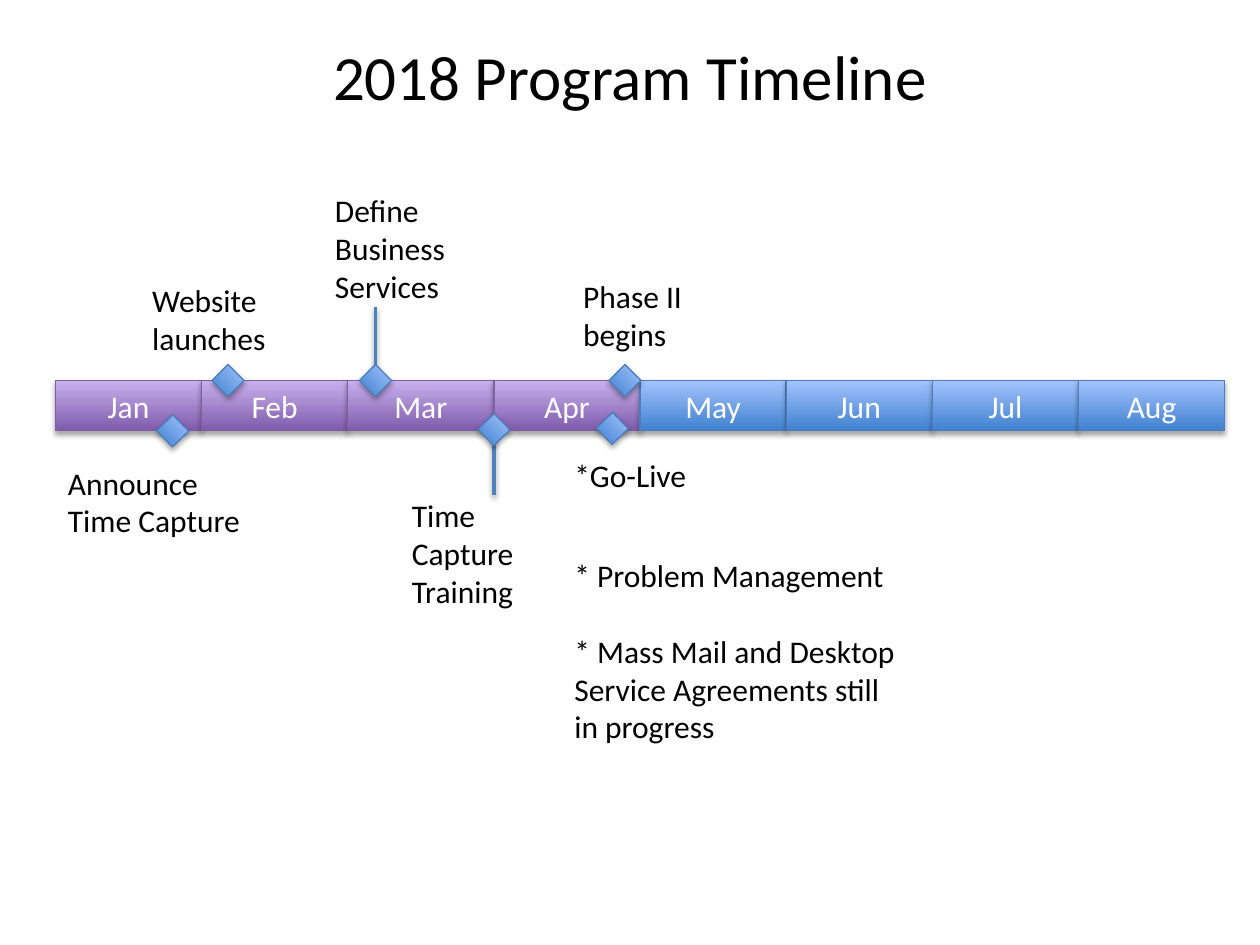
from lxml import etree
from pptx import Presentation
from pptx.dml.color import RGBColor
from pptx.enum.shapes import MSO_CONNECTOR, MSO_SHAPE
from pptx.enum.text import MSO_ANCHOR, PP_ALIGN
from pptx.oxml.ns import qn
from pptx.util import Inches, Pt

RECT = MSO_SHAPE.RECTANGLE
STRAIGHT = MSO_CONNECTOR.STRAIGHT
TOP, MIDDLE = MSO_ANCHOR.TOP, MSO_ANCHOR.MIDDLE
CENTER = PP_ALIGN.CENTER

COLORS = {
    "black": "000000",
    "white": "FFFFFF",
    "purple_dark": "7F5BAB",
    "purple_light": "C8B0ED",
    "purple_line": "7D60A0",
    "blue_dark": "3F80CE",
    "blue_light": "A4C4FF",
    "blue_line": "4B7EBC",
    "stem": "4F81BD",
}
FONT = "Calibri"
MONTHS = ["Jan", "Feb", "Mar", "Apr", "May", "Jun", "Jul", "Aug"]
PAST_MONTHS = 4
MARKER = 0.18

STEMS = [(2.98, 2.44, 3.02), (3.92, 3.35, 3.93)]
MARKERS = [
    (2.98, 3.02, 45),
    (4.86, 3.4, 45.9),
    (1.37, 3.42, 45.9),
    (1.81, 3.02, 45),
    (4.96, 3.02, 45),
    (3.92, 3.41, 45.9),
]
LABELS = [
    (2.56, 1.47, 1.45, 1.01, ["Define Business Services"], 0),
    (4.46, 3.57, 1.23, 0.4, ["*Go-Live"], 0),
    (0.44, 3.63, 1.58, 0.71, ["Announce", "Time Capture"], 0),
    (1.11, 2.18, 1.11, 0.71, ["Website launches"], 0),
    (4.53, 2.15, 1.45, 0.71, ["Phase II begins"], 0),
    (3.17, 3.89, 1.23, 1.01, ["Time Capture", "Training"], 0),
    (4.46, 4.36, 2.78, 1.62,
     ["* Problem Management",
      "* Mass Mail and Desktop Service Agreements still in progress"], 22),
]


def rgb(name):
    return RGBColor.from_string(COLORS[name])


def format_paragraph(p, size, color, align=None):
    p.alignment = align
    for r in p.runs:
        r.font.name = FONT
        r.font.size = Pt(size)
        r.font.color.rgb = rgb(color)


def add_shadow(sp, alpha, distance):
    effects = etree.SubElement(sp._element.spPr, qn("a:effectLst"))
    shadow = etree.SubElement(
        effects, qn("a:outerShdw"), blurRad=str(Pt(3.1)),
        dist=str(Pt(distance)), dir="5400000", rotWithShape="0")
    color = etree.SubElement(shadow, qn("a:srgbClr"), val=COLORS["black"])
    etree.SubElement(color, qn("a:alpha"), val=str(alpha * 1000))


def add_block(s, left, top, width, height, hue):
    sp = s.shapes.add_shape(
        RECT, Inches(left), Inches(top), Inches(width), Inches(height))
    sp.fill.gradient()
    sp.fill.gradient_angle = 90
    for stop, shade in zip(sp.fill.gradient_stops, ("dark", "light")):
        stop.color.rgb = rgb(f"{hue}_{shade}")
    sp.line.color.rgb = rgb(f"{hue}_line")
    sp.line.width = Pt(0.75)
    add_shadow(sp, 35, 1.8)
    return sp


def add_title(s, left, top, width, height):
    sp = s.shapes.title
    sp.left, sp.top = Inches(left), Inches(top)
    sp.width, sp.height = Inches(width), Inches(height)
    tf = sp.text_frame
    tf.text = "2018 Program Timeline"
    tf.vertical_anchor = TOP
    tf.margin_top = Inches(0.09)
    format_paragraph(tf.paragraphs[0], 36, "black", CENTER)


def add_month_bar(s, left, top, width, height):
    step = width / len(MONTHS)
    for i, month in enumerate(MONTHS):
        hue = "purple" if i < PAST_MONTHS else "blue"
        sp = add_block(s, left + i * step, top, step, height, hue)
        tf = sp.text_frame
        tf.text = month
        tf.vertical_anchor = MIDDLE
        format_paragraph(tf.paragraphs[0], 18, "white", CENTER)


def add_stem(s, x, top, bottom):
    line = s.shapes.add_connector(
        STRAIGHT, Inches(x), Inches(top), Inches(x), Inches(bottom))
    line.line.color.rgb = rgb("stem")
    line.line.width = Pt(2)
    add_shadow(line, 38, 1.6)


def add_marker(s, x, y, angle):
    sp = add_block(s, x - MARKER / 2, y - MARKER / 2, MARKER, MARKER, "blue")
    sp.rotation = angle


def add_label(s, left, top, width, height, lines, gap):
    box = s.shapes.add_textbox(
        Inches(left), Inches(top), Inches(width), Inches(height))
    tf = box.text_frame
    tf.word_wrap = True
    tf.text = "\n".join(lines)
    for i, p in enumerate(tf.paragraphs):
        format_paragraph(p, 18, "black")
        if i and gap:
            p.space_before = Pt(gap)


def main():
    prs = Presentation()
    prs.slide_width, prs.slide_height = Inches(10), Inches(7.5)
    s = prs.slides.add_slide(prs.slide_layouts[5])
    add_title(s, 0.75, 0.21, 8.5, 1)
    add_month_bar(s, 0.44, 3.02, 9.28, 0.4)
    for stem in STEMS:
        add_stem(s, *stem)
    for marker in MARKERS:
        add_marker(s, *marker)
    for label in LABELS:
        add_label(s, *label)
    prs.save("out.pptx")


if __name__ == "__main__":
    main()
